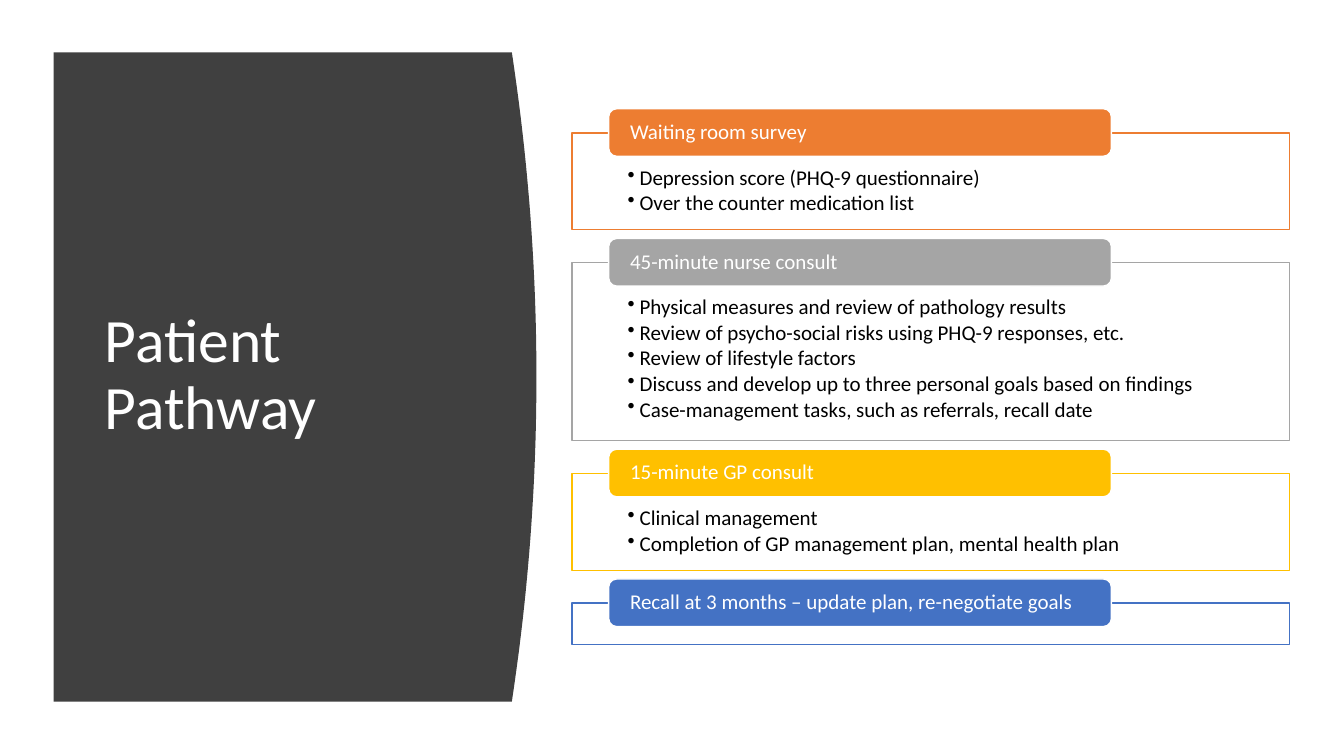
"""Build the Patient Pathway slide: a curved title panel and four stacked stages."""
from lxml import etree
from pptx import Presentation, util as u
from pptx.dml.color import RGBColor
from pptx.enum import shapes, text
from pptx.oxml.ns import qn

TITLE = "Patient Pathway"
STAGES = [
    ("Waiting room survey", "ED7D31", [
        "Depression score (PHQ-9 questionnaire)",
        "Over the counter medication list",
    ]),
    ("45-minute nurse consult", "A5A5A5", [
        "Physical measures and review of pathology results",
        "Review of psycho-social risks using PHQ-9 responses, etc.",
        "Review of lifestyle factors",
        "Discuss and develop up to three personal goals based on findings",
        "Case-management tasks, such as referrals, recall date",
    ]),
    ("15-minute GP consult", "FFC000", [
        "Clinical management",
        "Completion of GP management plan, mental health plan",
    ]),
    ("Recall at 3 months – update plan, re-negotiate goals", "4472C4", []),
]
THEME = {"font": "Calibri", "panel": "404040", "light": "FFFFFF", "dark": "000000",
         "title": 44, "body": 15, "line": 1}
PANEL = {"left": 1.35, "top": 1.32, "bottom": 17.68, "shoulder": 12.9, "bulge": 0.62}
BOX = {"left": 14.42, "top": 3.35, "width": 18.08, "gap": 0.83}
TAB = {"left": 15.34, "width": 12.67, "height": 1.2, "rise": 0.61}
CURVE_STEPS = 40


def rgb(value):
    return RGBColor.from_string(value)


def paint(sp, fill, line=None):
    sp.shadow.inherit = False
    sp.fill.solid()
    sp.fill.fore_color.rgb = rgb(fill)
    if line:
        sp.line.color.rgb = rgb(line)
        sp.line.width = u.Pt(THEME["line"])
    else:
        sp.line.fill.background()


def write(sp, lines, size, color, anchor, insets, after=0, bullet=False):
    tf = sp.text_frame
    tf.word_wrap = True
    tf.vertical_anchor = anchor
    tf.margin_left, tf.margin_top, tf.margin_right, tf.margin_bottom = map(u.Cm, insets)
    for i, line in enumerate(lines):
        p = tf.add_paragraph() if i else tf.paragraphs[0]
        p.text = line
        p.alignment = text.PP_ALIGN.LEFT
        p.line_spacing = 0.9
        p.space_after = u.Pt(after)
        p.font.name, p.font.size = THEME["font"], u.Pt(size)
        p.font.color.rgb = rgb(color)
        if bullet:
            pPr = p._p.get_or_add_pPr()
            pPr.set("marL", str(u.Cm(0.3)))
            pPr.set("indent", str(u.Cm(-0.3)))
            mark = etree.Element(qn("a:buChar"), char="•")
            pPr.find(qn("a:defRPr")).addprevious(mark)


def add_panel(s):
    middle = (PANEL["top"] + PANEL["bottom"]) / 2
    half = PANEL["bottom"] - middle
    edge = []
    for i in range(CURVE_STEPS + 1):
        t = 2 * i / CURVE_STEPS - 1
        x = PANEL["shoulder"] + PANEL["bulge"] * (1 - t * t)
        edge.append((u.Cm(x), u.Cm(middle + half * t)))
    left = u.Cm(PANEL["left"])
    fb = s.shapes.build_freeform(left, u.Cm(PANEL["top"]))
    fb.add_line_segments(edge + [(left, u.Cm(PANEL["bottom"]))])
    paint(fb.convert_to_shape(), THEME["panel"])
    tb = s.shapes.add_textbox(u.Cm(2.39), u.Cm(2.82), u.Cm(9.5), u.Cm(13.31))
    write(tb, [TITLE], THEME["title"], THEME["light"], text.MSO_ANCHOR.MIDDLE,
          (0.25, 0.13, 0.25, 0.13))


def add_stage(s, top, height, heading, color, points):
    box = s.shapes.add_shape(shapes.MSO_SHAPE.RECTANGLE, u.Cm(BOX["left"]), u.Cm(top),
                             u.Cm(BOX["width"]), u.Cm(height))
    paint(box, THEME["light"], color)
    white = box._element.spPr.find(qn("a:solidFill"))[0]
    etree.SubElement(white, qn("a:alpha"), val="90000")
    write(box, points, THEME["body"], THEME["dark"], text.MSO_ANCHOR.TOP,
          (1.4, 0.86, 1.4, 0.3), after=2, bullet=True)
    tab = s.shapes.add_shape(shapes.MSO_SHAPE.ROUNDED_RECTANGLE, u.Cm(TAB["left"]),
                             u.Cm(top - TAB["rise"]), u.Cm(TAB["width"]), u.Cm(TAB["height"]))
    paint(tab, color, THEME["light"])
    write(tab, [heading], THEME["body"], THEME["light"], text.MSO_ANCHOR.MIDDLE,
          (0.48, 0, 0.48, 0))


def main():
    prs = Presentation()
    prs.slide_width, prs.slide_height = u.Cm(33.87), u.Cm(19.05)
    s = prs.slides.add_slide(prs.slide_layouts[6])
    add_panel(s)
    top = BOX["top"]
    for heading, color, points in STAGES:
        height = 1.08 + 0.68 * len(points) if points else 1.04
        add_stage(s, top, height, heading, color, points)
        top += height + BOX["gap"]
    prs.save("out.pptx")


if __name__ == "__main__":
    main()
